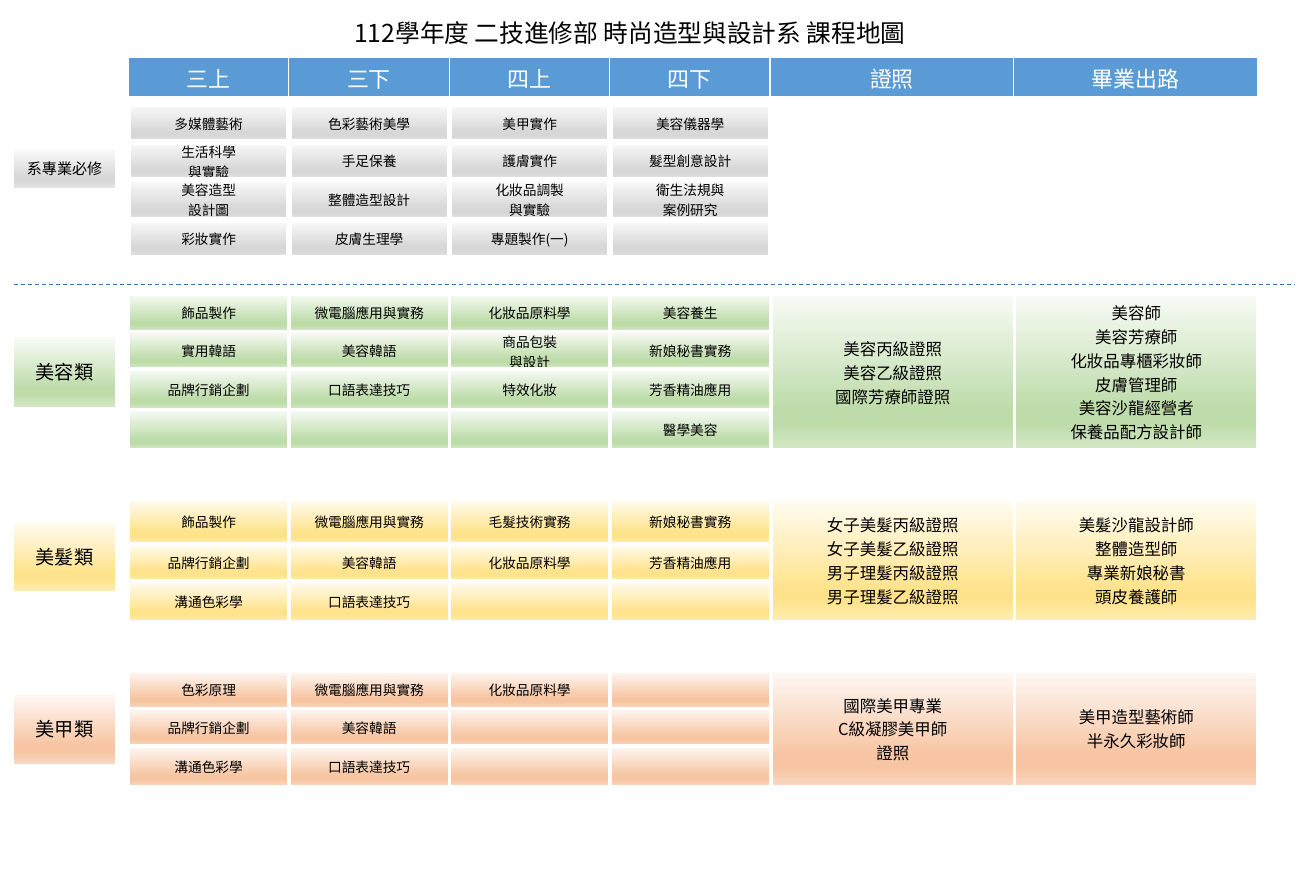
from lxml.etree import SubElement
from pptx import Presentation
from pptx.dml.color import RGBColor
from pptx.enum.dml import MSO_LINE_DASH_STYLE as DASH
from pptx.enum.shapes import MSO_CONNECTOR, MSO_SHAPE
from pptx.enum.text import MSO_ANCHOR, PP_ALIGN
from pptx.oxml.ns import qn
from pptx.util import Inches, Pt

FONT = "Noto Sans CJK SC"
COLORS = {"black": "000000", "white": "FFFFFF", "header": "5B9BD5", "divider": "4472C4"}
GRADIENTS = {
    "gray": ("FAFAFA", "D7D7D7", "D7D7D7", "E4E4E4"),
    "green": ("F8FBF6", "BEDCAA", "BEDCAA", "D4E8C6"),
    "yellow": ("FFFCF2", "FFE38C", "FFE38C", "FFECB2"),
    "orange": ("FEF8F5", "F7C5A2", "F7C5A2", "FAD8C1"),
}
STOPS = (0, 74, 83, 100)
LABEL_LEFT, LABEL_WIDTH = 0.14, 1.03
COURSE_LEFT, COURSE_WIDTH = 1.3, 1.626
CAREER_LEFT, CAREER_WIDTH = 7.81, 2.467
HEADERS = ["三上", "三下", "四上", "四下", "證照", "畢業出路"]
HEADER_WIDTHS = [1.625] * 4 + [2.47] * 2

SECTIONS = [
    {"label": "系專業必修", "label_box": (1.51, 0.39), "label_size": 11, "color": "gray",
     "top": 1.06, "rows": [0.38, 0.38, 0.41, 0.38], "border": 4.5, "careers": None,
     "courses": [
         ["多媒體藝術", "色彩藝術美學", "美甲實作", "美容儀器學"],
         ["生活科學\n與實驗", "手足保養", "護膚實作", "髮型創意設計"],
         ["美容造型\n設計圖", "整體造型設計", "化妝品調製\n與實驗", "衛生法規與\n案例研究"],
         ["彩妝實作", "皮膚生理學", "專題製作(一)", ""]]},
    {"label": "美容類", "label_box": (3.42, 0.7), "label_size": 14, "color": "green",
     "top": 2.98, "rows": [0.38, 0.38, 0.41, 0.41], "border": 3,
     "courses": [
         ["飾品製作", "微電腦應用與實務", "化妝品原料學", "美容養生"],
         ["實用韓語", "美容韓語", "商品包裝\n與設計", "新娘秘書實務"],
         ["品牌行銷企劃", "口語表達技巧", "特效化妝", "芳香精油應用"],
         ["", "", "", "醫學美容"]],
     "careers": ["美容丙級證照\n美容乙級證照\n國際芳療師證照",
                 "美容師\n美容芳療師\n化妝品專櫃彩妝師\n皮膚管理師\n美容沙龍經營者\n保養品配方設計師"]},
    {"label": "美髮類", "label_box": (5.29, 0.7), "label_size": 14, "color": "yellow",
     "top": 5.06, "rows": [0.45, 0.38, 0.41], "border": 3,
     "courses": [
         ["飾品製作", "微電腦應用與實務", "毛髮技術實務", "新娘秘書實務"],
         ["品牌行銷企劃", "美容韓語", "化妝品原料學", "芳香精油應用"],
         ["溝通色彩學", "口語表達技巧", "", ""]],
     "careers": ["女子美髮丙級證照\n女子美髮乙級證照\n男子理髮丙級證照\n男子理髮乙級證照",
                 "美髮沙龍設計師\n整體造型師\n專業新娘秘書\n頭皮養護師"]},
    {"label": "美甲類", "label_box": (7.04, 0.7), "label_size": 14, "color": "orange",
     "top": 6.8, "rows": [0.38, 0.38, 0.41], "border": 3,
     "courses": [
         ["色彩原理", "微電腦應用與實務", "化妝品原料學", ""],
         ["品牌行銷企劃", "美容韓語", "", ""],
         ["溝通色彩學", "口語表達技巧", "", ""]],
     "careers": ["國際美甲專業\nC級凝膠美甲師\n證照", "美甲造型藝術師\n半永久彩妝師"]},
]


def apply_format(target, values):
    """Set each named attribute on the target."""
    for name, value in values.items():
        setattr(target, name, value)


def write_text(frame, text, size, color="black", align=PP_ALIGN.CENTER):
    """Write one paragraph per line of text."""
    for index, line in enumerate(text.split("\n") if text else []):
        paragraph = frame.add_paragraph() if index else frame.paragraphs[0]
        paragraph.alignment = align
        run = paragraph.add_run()
        run.text = line
        apply_format(run.font, {"name": FONT, "size": Pt(size)})
        run.font.color.rgb = RGBColor.from_string(COLORS[color])
        SubElement(run.font._element, qn("a:ea"), typeface=FONT)


def fill_gradient(fill, properties, color):
    """Give a shape or a cell the vertical gradient of its section."""
    fill.gradient()
    gradient = properties.find(qn("a:gradFill"))
    for child in list(gradient):
        gradient.remove(child)
    stops = SubElement(gradient, qn("a:gsLst"))
    for position, shade in zip(STOPS, GRADIENTS[color]):
        stop = SubElement(stops, qn("a:gs"), pos=str(position * 1000))
        SubElement(stop, qn("a:srgbClr"), val=shade)
    SubElement(gradient, qn("a:lin"), ang="5400000", scaled="0")


def add_borders(cell, widths):
    """Draw white borders in the order left, right, top, bottom."""
    properties = cell._tc.get_or_add_tcPr()
    for side, width in zip(("lnL", "lnR", "lnT", "lnB"), widths):
        line = SubElement(properties, qn(f"a:{side}"), w=str(Pt(width)))
        solid = SubElement(line, qn("a:solidFill"))
        SubElement(solid, qn("a:srgbClr"), val=COLORS["white"])


def add_grid(slide, left, top, widths, heights):
    """Add an empty table with the given column widths and row heights."""
    table = slide.shapes.add_table(
        len(heights), len(widths), Inches(left), Inches(top),
        Inches(sum(widths)), Inches(sum(heights))).table
    for column, width in zip(table.columns, widths):
        column.width = Inches(width)
    for row, height in zip(table.rows, heights):
        row.height = Inches(height)
    return table


def add_header(slide):
    """Add the row of column headings."""
    table = add_grid(slide, COURSE_LEFT, 0.58, HEADER_WIDTHS, [0.41])
    for cell, text in zip(table.iter_cells(), HEADERS):
        add_borders(cell, (1, 1, 1, 3))
        cell.fill.solid()
        cell.fill.fore_color.rgb = RGBColor.from_string(COLORS["header"])
        write_text(cell.text_frame, text, 16, "white")


def add_gradient_table(slide, left, top, width, heights, rows, size, section):
    """Add a table of courses or careers in the section's colours."""
    table = add_grid(slide, left, top, [width] * len(rows[0]), heights)
    texts = [text for row in rows for text in row]
    for cell, text in zip(table.iter_cells(), texts):
        apply_format(cell, {"margin_left": Inches(0.07), "margin_right": Inches(0.07),
                            "margin_top": 0, "margin_bottom": 0,
                            "vertical_anchor": MSO_ANCHOR.MIDDLE})
        add_borders(cell, [section["border"]] * 4)
        fill_gradient(cell.fill, cell._tc.tcPr, section["color"])
        write_text(cell.text_frame, text, size)


def add_label(slide, section):
    """Add the box that names a section."""
    top, height = section["label_box"]
    shape = slide.shapes.add_shape(MSO_SHAPE.RECTANGLE, Inches(LABEL_LEFT), Inches(top),
                                   Inches(LABEL_WIDTH), Inches(height))
    shape.shadow.inherit = False
    shape.line.fill.background()
    fill_gradient(shape.fill, shape._element.spPr, section["color"])
    apply_format(shape.text_frame, {"word_wrap": True, "vertical_anchor": MSO_ANCHOR.MIDDLE})
    write_text(shape.text_frame, section["label"], section["label_size"])


def add_section(slide, section):
    """Add a section's label, courses and careers."""
    add_label(slide, section)
    add_gradient_table(slide, COURSE_LEFT, section["top"], COURSE_WIDTH, section["rows"],
                       section["courses"], 10, section)
    if section["careers"]:
        add_gradient_table(slide, CAREER_LEFT, section["top"], CAREER_WIDTH,
                           [sum(section["rows"])], [section["careers"]], 12, section)


def add_divider(slide):
    """Add the dashed line below the required courses."""
    line = slide.shapes.add_connector(MSO_CONNECTOR.STRAIGHT, Inches(0.14), Inches(2.88),
                                      Inches(13.11), Inches(2.88))
    apply_format(line.line, {"width": Pt(0.75), "dash_style": DASH.DASH})
    line.line.color.rgb = RGBColor.from_string(COLORS["divider"])
    SubElement(line._element.spPr, qn("a:effectLst"))


def main():
    """Build the course map."""
    presentation = Presentation()
    apply_format(presentation, {"slide_width": Inches(13.33), "slide_height": Inches(9.06)})
    slide = presentation.slides.add_slide(presentation.slide_layouts[6])
    title = slide.shapes.add_textbox(Inches(3.49), Inches(0.13), Inches(6.28), Inches(0.4))
    title.text_frame.word_wrap = True
    write_text(title.text_frame, "112學年度 二技進修部 時尚造型與設計系 課程地圖", 18,
               align=PP_ALIGN.LEFT)
    add_header(slide)
    add_divider(slide)
    for section in SECTIONS:
        add_section(slide, section)
    presentation.save("out.pptx")


if __name__ == "__main__":
    main()
